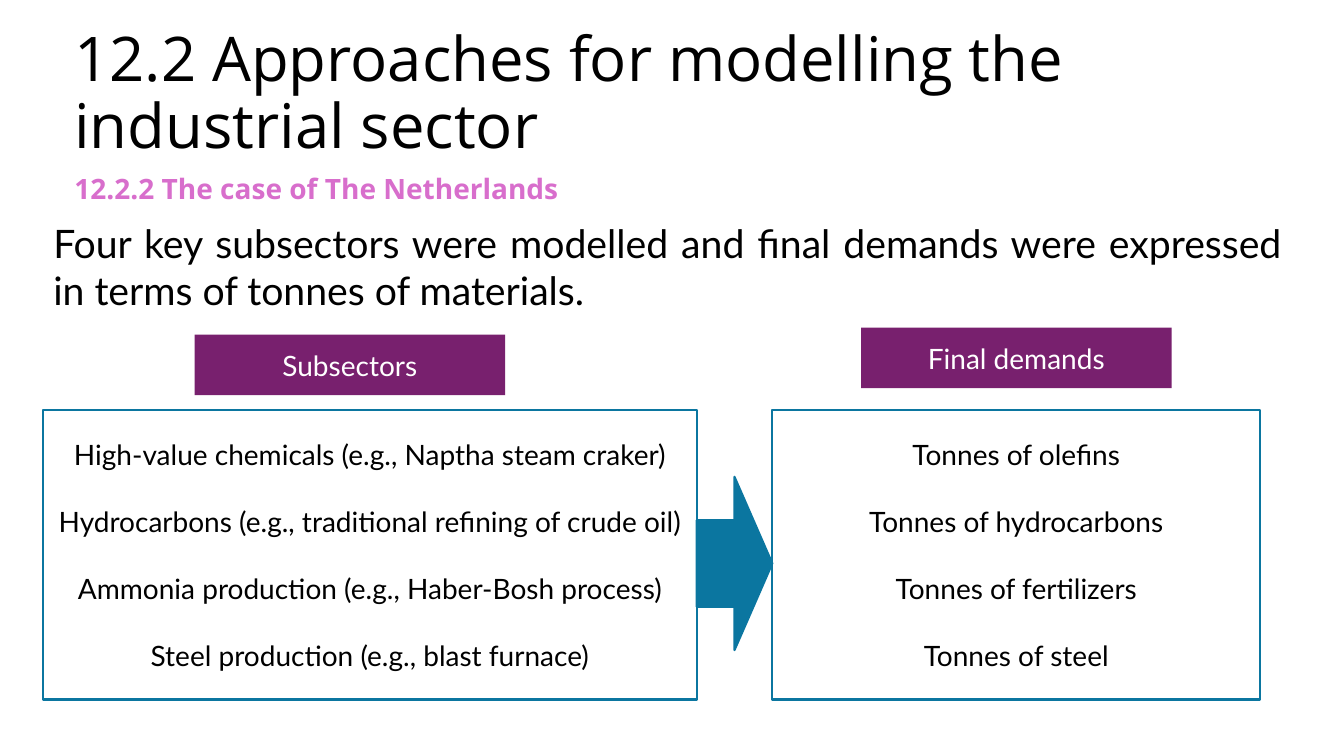
"""Build the slide on industrial subsectors and final demands in the Netherlands."""
from dataclasses import dataclass

from pptx import Presentation
from pptx.dml.color import RGBColor
from pptx.enum.shapes import MSO_SHAPE
from pptx.enum.text import MSO_ANCHOR, PP_ALIGN
from pptx.util import Pt

PX = 9144
RECTANGLE, ARROW = MSO_SHAPE.RECTANGLE, MSO_SHAPE.RIGHT_ARROW
TOP, MIDDLE, BOTTOM = MSO_ANCHOR.TOP, MSO_ANCHOR.MIDDLE, MSO_ANCHOR.BOTTOM
LEFT, CENTER, JUSTIFY = PP_ALIGN.LEFT, PP_ALIGN.CENTER, PP_ALIGN.JUSTIFY
COLORS = {
    "black": "000000",
    "white": "FFFFFF",
    "pink": "D86ECC",
    "purple": "78206E",
    "blue": "0B76A0",
}
BOX_TOP, BOX_HEIGHT = 407, 287
LABEL_WIDTH, LABEL_HEIGHT = 308, 60


@dataclass(frozen=True)
class Area:
    left: int
    top: int
    width: int
    height: int

    def emu(self) -> tuple[int, int, int, int]:
        return self.left * PX, self.top * PX, self.width * PX, self.height * PX


@dataclass(frozen=True)
class Heading:
    area: Area
    text: str
    size: int
    font: str
    color: str = "black"
    bold: bool = False
    align: PP_ALIGN = LEFT
    anchor: MSO_ANCHOR = TOP
    line_spacing: float = 1.0


@dataclass(frozen=True)
class Block:
    area: Area
    lines: tuple[str, ...] = ()
    fill: str | None = None
    outline: str | None = None
    color: str = "black"
    kind: MSO_SHAPE = RECTANGLE


HEADINGS = (
    Heading(Area(64, 12, 1133, 153), "12.2 Approaches for modelling the industrial sector",
            44, "Open Sans", anchor=BOTTOM, line_spacing=0.9),
    Heading(Area(64, 165, 944, 44), "12.2.2 The case of The Netherlands",
            20, "Open Sans", color="pink", bold=True),
    Heading(Area(43, 213, 1238, 104),
            "Four key subsectors were modelled and final demands were expressed "
            "in terms of tonnes of materials.",
            28, "Lato", align=JUSTIFY),
)

BLOCKS = (
    Block(Area(193, 332, LABEL_WIDTH, LABEL_HEIGHT), ("Subsectors",),
          fill="purple", color="white"),
    Block(Area(43, BOX_TOP, 648, BOX_HEIGHT), (
        "High-value chemicals (e.g., Naptha steam craker)",
        "Hydrocarbons (e.g., traditional refining of crude oil)",
        "Ammonia production (e.g., Haber-Bosh process)",
        "Steel production (e.g., blast furnace)",
    ), outline="blue"),
    Block(Area(854, 325, LABEL_WIDTH, LABEL_HEIGHT), ("Final demands",),
          fill="purple", color="white"),
    Block(Area(766, BOX_TOP, 484, BOX_HEIGHT), (
        "Tonnes of olefins",
        "Tonnes of hydrocarbons",
        "Tonnes of fertilizers",
        "Tonnes of steel",
    ), outline="blue"),
    Block(Area(691, 473, 75, 172), fill="blue", outline="blue", kind=ARROW),
)


def rgb(name: str) -> RGBColor:
    return RGBColor.from_string(COLORS[name])


def style_font(paragraph, name: str, size: int, color: str, bold: bool = False) -> None:
    paragraph.font.name = name
    paragraph.font.size = Pt(size)
    paragraph.font.color.rgb = rgb(color)
    paragraph.font.bold = bold


def draw_heading(slide, heading: Heading) -> None:
    frame = slide.shapes.add_textbox(*heading.area.emu()).text_frame
    frame.word_wrap = True
    frame.vertical_anchor = heading.anchor
    paragraph = frame.paragraphs[0]
    paragraph.text = heading.text
    paragraph.alignment = heading.align
    paragraph.line_spacing = heading.line_spacing
    style_font(paragraph, heading.font, heading.size, heading.color, heading.bold)


def draw_block(slide, block: Block) -> None:
    shape = slide.shapes.add_shape(block.kind, *block.area.emu())
    shape.shadow.inherit = False
    if block.fill:
        shape.fill.solid()
        shape.fill.fore_color.rgb = rgb(block.fill)
    else:
        shape.fill.background()
    if block.outline:
        shape.line.color.rgb = rgb(block.outline)
        shape.line.width = Pt(1.5)
    else:
        shape.line.fill.background()
    if not block.lines:
        return
    frame = shape.text_frame
    frame.word_wrap = True
    frame.vertical_anchor = MIDDLE
    frame.text = "\n".join(block.lines)
    for index, paragraph in enumerate(frame.paragraphs):
        paragraph.alignment = CENTER
        paragraph.space_before = Pt(24 if index else 0)
        style_font(paragraph, "Lato", 20, block.color)


def main() -> None:
    presentation = Presentation()
    presentation.slide_width = 1333 * PX
    presentation.slide_height = 750 * PX
    slide = presentation.slides.add_slide(presentation.slide_layouts[6])
    for heading in HEADINGS:
        draw_heading(slide, heading)
    for block in BLOCKS:
        draw_block(slide, block)
    presentation.save("out.pptx")


if __name__ == "__main__":
    main()
